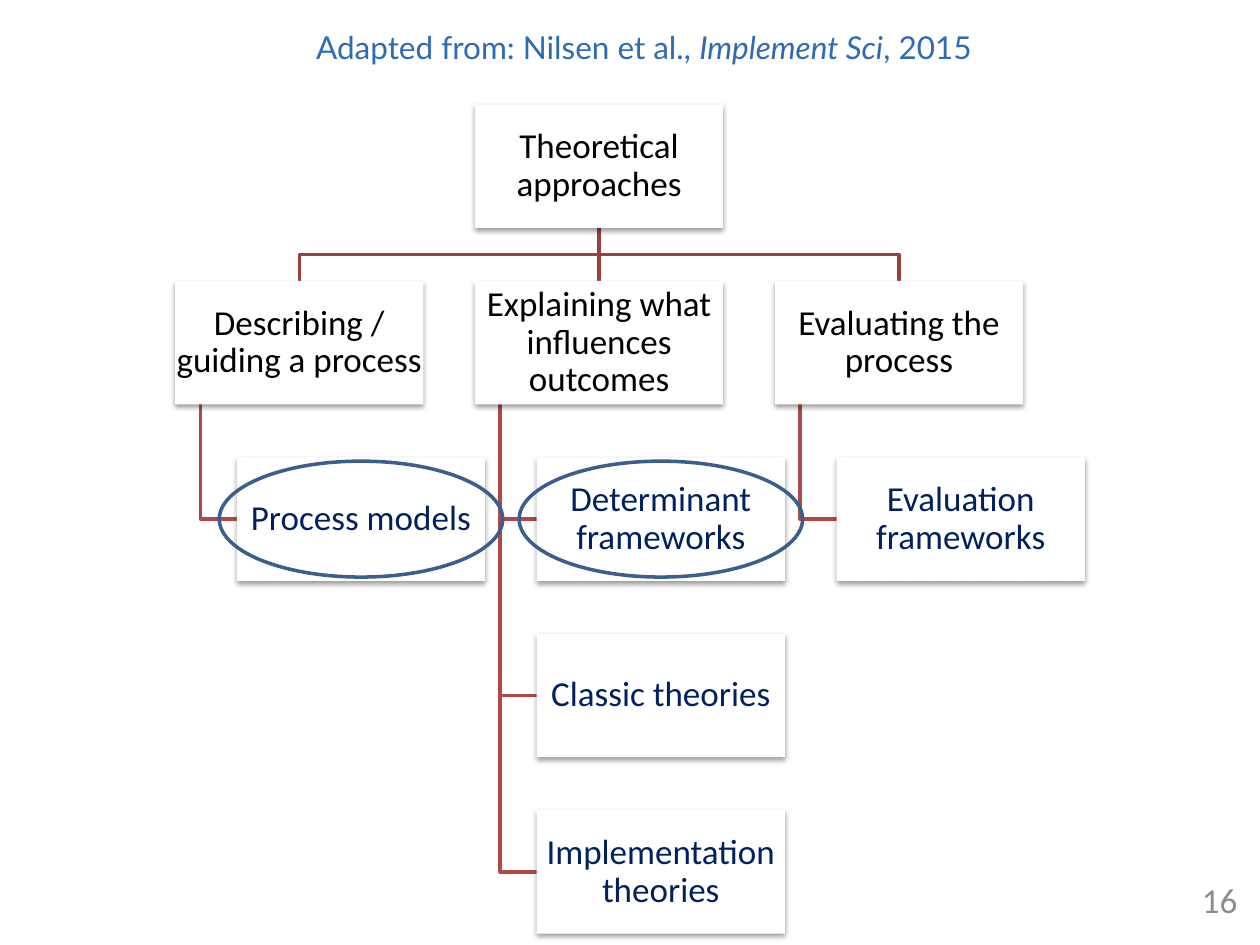
from dataclasses import dataclass

import pptx
import pptx.dml.color
import pptx.enum.shapes
import pptx.enum.text
import pptx.oxml
import pptx.oxml.ns
import pptx.util
from pptx.util import Inches

COLORS = {
    "white": "FFFFFF",
    "black": "000000",
    "navy": "002060",
    "trunk": "9A403E",
    "branch": "AE4946",
    "ring": "3A5F8C",
    "source": "2D6BB5",
    "number": "8C8C8C",
}
LEFT, TOP = 1.39, 0.83
COL_STEP, ROW_STEP = 2.38, 1.4
BOX_W, BOX_H = 1.97, 0.98
CHILD_INDENT, STEM_INDENT = 0.49, 0.2
RING_W, RING_H = 2.25, 0.92
ALIGN = pptx.enum.text.PP_ALIGN
SHADOW = (
    f'<a:effectLst {pptx.oxml.ns.nsdecls("a")}>'
    '<a:outerShdw blurRad="40000" dist="20000" dir="5400000" rotWithShape="0">'
    '<a:srgbClr val="000000"><a:alpha val="38000"/></a:srgbClr>'
    "</a:outerShdw></a:effectLst>"
)


@dataclass
class Node:
    text: str
    col: int
    row: int
    child: bool = False
    ringed: bool = False

    @property
    def x(self) -> float:
        return LEFT + self.col * COL_STEP + (CHILD_INDENT if self.child else 0)

    @property
    def y(self) -> float:
        return TOP + self.row * ROW_STEP

    @property
    def mid_x(self) -> float:
        return self.x + BOX_W / 2

    @property
    def mid_y(self) -> float:
        return self.y + BOX_H / 2

    @property
    def bottom(self) -> float:
        return self.y + BOX_H


ROOT = Node("Theoretical approaches", 1, 0)
AIMS = [
    Node("Describing / guiding a process", 0, 1),
    Node("Explaining what influences outcomes", 1, 1),
    Node("Evaluating the process", 2, 1),
]
APPROACHES = [
    Node("Process models", 0, 2, True, True),
    Node("Determinant frameworks", 1, 2, True, True),
    Node("Classic theories", 1, 3, True),
    Node("Implementation theories", 1, 4, True),
    Node("Evaluation frameworks", 2, 2, True),
]


def rgb(name: str) -> pptx.dml.color.RGBColor:
    return pptx.dml.color.RGBColor.from_string(COLORS[name])


def style_line(shape, color: str) -> None:
    shape.line.color.rgb = rgb(color)
    shape.line.width = pptx.util.Pt(2)


def style_paragraph(p, size: int, font: str, color: str, align) -> None:
    p.alignment = align
    p.font.size = pptx.util.Pt(size)
    p.font.name = font
    p.font.color.rgb = rgb(color)


def add_path(s, points: list[tuple[float, float]], color: str) -> None:
    start, *rest = [(Inches(x), Inches(y)) for x, y in points]
    builder = s.shapes.build_freeform(*start)
    builder.add_line_segments(rest, close=False)
    sp = builder.convert_to_shape()
    sp.shadow.inherit = False
    sp.fill.background()
    style_line(sp, color)


def add_trunk(s, aim: Node) -> None:
    bend = (ROOT.bottom + aim.y) / 2
    add_path(s, [(ROOT.mid_x, ROOT.bottom), (ROOT.mid_x, bend),
                 (aim.mid_x, bend), (aim.mid_x, aim.y)], "trunk")


def add_branch(s, aim: Node, approach: Node) -> None:
    stem = aim.x + STEM_INDENT
    add_path(s, [(stem, aim.bottom), (stem, approach.mid_y),
                 (approach.x, approach.mid_y)], "branch")


def add_straight_trunk(s, aim: Node):
    line = s.shapes.add_connector(
        pptx.enum.shapes.MSO_CONNECTOR.STRAIGHT,
        Inches(ROOT.mid_x), Inches(ROOT.bottom), Inches(aim.mid_x), Inches(aim.y))
    line._element.spPr.append(
        pptx.oxml.parse_xml(f'<a:effectLst {pptx.oxml.ns.nsdecls("a")}/>'))
    style_line(line, "trunk")
    return line


def add_box(s, node: Node):
    sp = s.shapes.add_shape(
        pptx.enum.shapes.MSO_SHAPE.RECTANGLE,
        Inches(node.x), Inches(node.y), Inches(BOX_W), Inches(BOX_H))
    sp.fill.solid()
    sp.fill.fore_color.rgb = rgb("white")
    sp.line.fill.background()
    sp._element.spPr.append(pptx.oxml.parse_xml(SHADOW))
    tf = sp.text_frame
    tf.word_wrap = True
    tf.vertical_anchor = pptx.enum.text.MSO_ANCHOR.MIDDLE
    tf.margin_left = tf.margin_right = tf.margin_top = tf.margin_bottom = Inches(0.01)
    p = tf.paragraphs[0]
    p.text = node.text
    p.line_spacing = 0.9
    style_paragraph(p, 20, "Calibri", "navy" if node.child else "black", ALIGN.CENTER)
    return sp


def add_ring(s, node: Node) -> None:
    sp = s.shapes.add_shape(
        pptx.enum.shapes.MSO_SHAPE.OVAL,
        Inches(node.mid_x - RING_W / 2), Inches(node.mid_y - RING_H / 2),
        Inches(RING_W), Inches(RING_H))
    sp.shadow.inherit = False
    sp.fill.background()
    style_line(sp, "ring")


def add_label(s, x: float, y: float, w: float, h: float,
              runs: list[tuple[str, bool]], size: int, font: str, color: str):
    tf = s.shapes.add_textbox(Inches(x), Inches(y), Inches(w), Inches(h)).text_frame
    tf.word_wrap = True
    p = tf.paragraphs[0]
    for text, italic in runs:
        r = p.add_run()
        r.text = text
        if italic:
            r.font.italic = True
    style_paragraph(p, size, font, color, ALIGN.RIGHT)
    return tf


def main() -> None:
    prs = pptx.Presentation()
    prs.slide_width, prs.slide_height = Inches(10), Inches(7.5)
    s = prs.slides.add_slide(prs.slide_layouts[6])

    tf = add_label(s, 8.75, 6.95, 1.17, 0.38, [("16", False)], 20, "Calibri", "number")
    tf.vertical_anchor = pptx.enum.text.MSO_ANCHOR.MIDDLE

    for approach in APPROACHES:
        add_branch(s, AIMS[approach.col], approach)
    left_aim, middle_aim, right_aim = AIMS
    add_trunk(s, left_aim)
    add_trunk(s, right_aim)
    line = add_straight_trunk(s, middle_aim)

    root_box = add_box(s, ROOT)
    aim_boxes = [add_box(s, aim) for aim in AIMS]
    line.begin_connect(root_box, 2)
    line.end_connect(aim_boxes[1], 0)
    for approach in APPROACHES:
        add_box(s, approach)
    for approach in APPROACHES:
        if approach.ringed:
            add_ring(s, approach)

    add_label(s, 0.92, 0.17, 6.89, 0.4,
              [("Adapted from: Nilsen et al., ", False), ("Implement Sci", True),
               (", 2015", False)], 18, "Lato", "source")
    prs.save("out.pptx")


if __name__ == "__main__":
    main()
